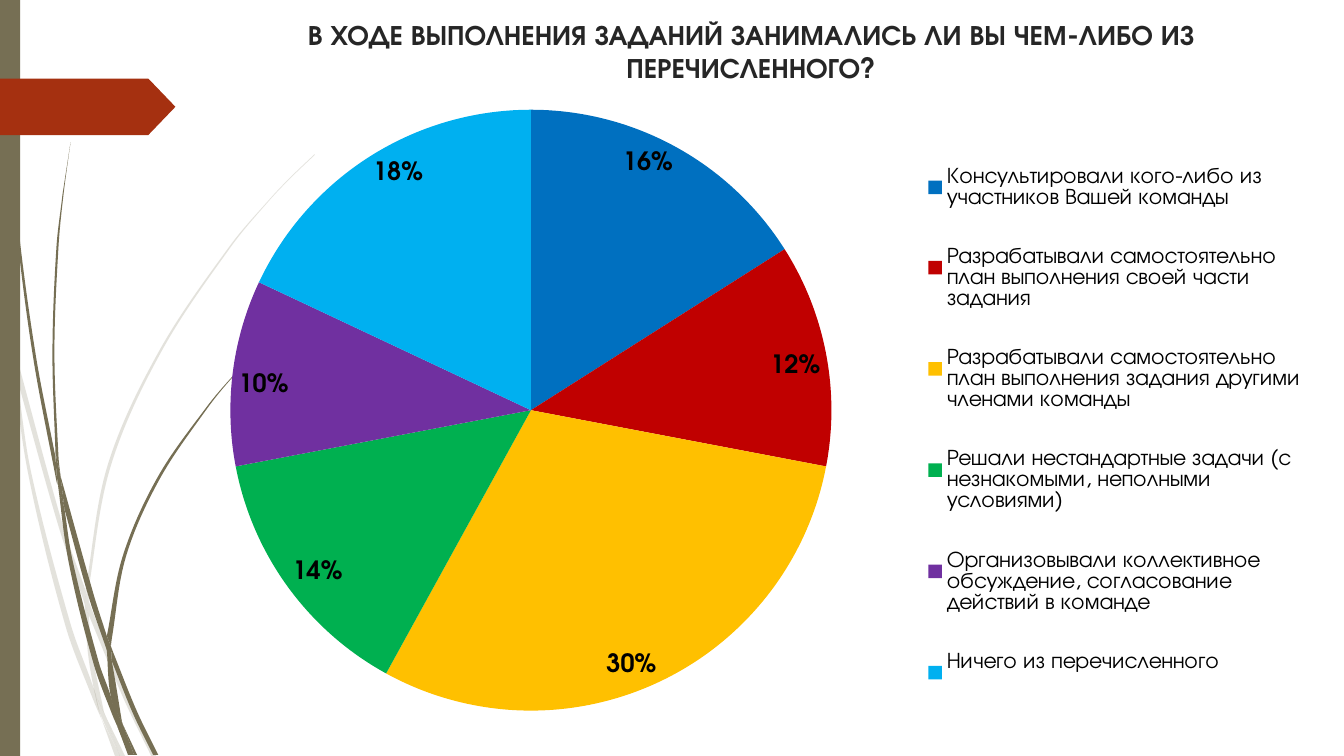
from dataclasses import dataclass

from lxml import etree
from pptx import Presentation
from pptx.chart.chart import Chart
from pptx.chart.data import CategoryChartData
from pptx.dml.color import RGBColor
from pptx.enum.chart import XL_CHART_TYPE, XL_LABEL_POSITION, XL_LEGEND_POSITION
from pptx.enum.shapes import MSO_SHAPE
from pptx.enum.text import MSO_ANCHOR, PP_ALIGN
from pptx.oxml.ns import qn
from pptx.shapes.autoshape import Shape
from pptx.slide import Slide
from pptx.util import Inches, Pt


@dataclass(frozen=True)
class Theme:
    font: str = "TeX Gyre Adventor"
    olive: str = "766F54"
    rust: str = "A53010"
    title: str = "262626"
    black: str = "000000"
    title_size: int = 20
    label_size: int = 18
    legend_size: int = 16


@dataclass(frozen=True)
class Answer:
    text: str
    percent: int
    color: str


@dataclass(frozen=True)
class Blade:
    """A sliver of grass: one edge out, the other edge back, as x + yj inches."""
    out: tuple[complex, ...]
    back: tuple[complex, ...]


THEME = Theme()
QUESTION = "В ХОДЕ ВЫПОЛНЕНИЯ ЗАДАНИЙ ЗАНИМАЛИСЬ ЛИ ВЫ ЧЕМ-ЛИБО ИЗ ПЕРЕЧИСЛЕННОГО?"
ANSWERS = (
    Answer("Консультировали кого-либо из участников Вашей команды", 16, "0070C0"),
    Answer("Разрабатывали самостоятельно план выполнения своей части задания", 12, "C00000"),
    Answer("Разрабатывали самостоятельно план выполнения задания другими членами команды",
           30, "FFC000"),
    Answer("Решали нестандартные задачи (с незнакомыми, неполными условиями)", 14, "00B050"),
    Answer("Организовывали коллективное обсуждение, согласование действий в команде",
           10, "7030A0"),
    Answer("Ничего из перечисленного", 18, "00B0F0"),
)
PALE_GRASS = (
    Blade((.11+3.5j, .09+3.22j, 2.82j), (2.99j, .1+3.44j)),
    Blade((.17+3.76j, .58+5.22j, .84+5.99j), (.85+5.86j, .62+5.2j, .14+3.45j)),
    Blade((.88+6.1j, 1.23+6.94j, 1.5+7.5j), (1.55+7.5j, 1.27+6.92j, .92+6.07j, .88+5.96j)),
    Blade((1.05+7.11j, 1.19+7.5j), (1.24+7.5j,)),
    Blade((.11+3.5j, .28+4.7j, .65+6.21j, .92+6.93j, 1.01+7.14j),
          (.99+7.07j, .93+6.83j, .7+6.19j, .31+4.69j, .17+3.76j)),
    Blade((.84+5.99j, .87+6.46j, .93+6.83j, .96+6.92j, 1.05+7.11j),
          (1.03+7.06j, .91+6.46j, .88+6.1j)),
    Blade((.88+5.96j, .88+5.84j, 1.1+4.62j, 1.6+3.49j, 2.29+2.45j, 2.68+1.98j,
           2.9+1.75j, 3.12+1.54j),
          (3.12+1.53j, 2.89+1.75j, 2.68+1.97j, 2.28+2.44j, 1.58+3.48j, 1.07+4.61j,
           .85+5.84j)),
    Blade((1.01+7.14j, 1.14+7.5j), (1.19+7.5j,)),
    Blade((.88+6.1j, .88+5.96j), (.85+5.86j, .84+5.99j)),
    Blade((.93+6.83j, .99+7.07j, 1.19+7.5j), (1.05+7.11j, .96+6.92j)),
)
DARK_GRASS = (
    Blade((.03, .03+.48j, .07+1.1j, .17+2.33j, .33+3.55j, .56+4.77j, .57+4.81j),
          (.55+4.53j, .36+3.55j, .19+2.32j, .08+1.09j, .05+.48j)),
    Blade((.64+5.05j, .88+5.92j, 1.06+6.45j), (1.06+6.31j, .93+5.9j, .6+4.72j)),
    Blade((1.11+6.56j, 1.32+7.08j, 1.52+7.49j), (1.57+7.49j, 1.36+7.06j, 1.13+6.49j, 1.1+6.41j)),
    Blade((.57+4.77j, .68+5.57j, .93+6.59j, 1.11+7.08j, 1.17+7.22j),
          (1.16+7.17j, 1.1+6.91j, .98+6.57j, .72+5.56j, .64+5.05j)),
    Blade((.6+4.72j, .58+4.53j, .54+3.49j, .58+2.45j, .63+1.93j, .7+1.41j),
          (.62+1.93j, .56+2.45j, .52+3.49j, .55+4.49j)),
    Blade((1.22+7.19j, 1.33+7.49j), (1.36+7.49j,)),
    Blade((.55+4.49j, .57+4.77j, .64+5.05j), (.6+4.72j,)),
    Blade((1.1+6.41j, 1.11+6.33j, 1.25+5.52j, 1.58+4.76j, 2.05+4.06j, 2.31+3.74j, 2.61+3.44j),
          (2.6+3.44j, 2.31+3.73j, 2.04+4.05j, 1.56+4.74j, 1.22+5.51j, 1.06+6.31j)),
    Blade((1.17+7.22j, 1.27+7.49j), (1.31+7.49j,)),
    Blade((1.06+6.45j, 1.1+6.91j, 1.22+7.19j), (1.21+7.16j, 1.11+6.56j, 1.09+6.51j)),
    Blade((1.06+6.31j, 1.06+6.45j, 1.11+6.56j), (1.1+6.41j,)),
    Blade((1.1+6.91j, 1.17+7.22j, 1.3+7.49j), (1.33+7.49j, 1.22+7.19j, 1.16+7.06j)),
)


def paint(shape: Shape, color: str, opacity: int = 100) -> None:
    shape.shadow.inherit = False
    shape.fill.solid()
    shape.fill.fore_color.rgb = RGBColor.from_string(color)
    shape.line.fill.background()
    if opacity < 100:
        tint = shape.element.spPr.find(f"{qn('a:solidFill')}/{qn('a:srgbClr')}")
        etree.SubElement(tint, qn("a:alpha"), val=str(opacity * 1000))


def smooth(edge: tuple[complex, ...]) -> list[complex]:
    """Bezier points, three to a segment, of a curve through the edge."""
    padded = (edge[0], *edge, edge[-1])
    curve = []
    for before, start, end, after in zip(padded, padded[1:], padded[2:], padded[3:]):
        reach = abs(end - start) / 3
        leaving, arriving = end - before, after - start
        curve += [start + leaving / abs(leaving) * reach,
                  end - arriving / abs(arriving) * reach, end]
    return curve


def add_blade(slide: Slide, blade: Blade, opacity: int) -> None:
    corner = blade.back[0]
    curve = smooth(blade.out) + [blade.out[-1], corner, corner] + smooth(blade.back)
    root = blade.out[0]
    outline = slide.shapes.build_freeform(Inches(root.real), Inches(root.imag))
    outline.add_line_segments([(Inches(p.real), Inches(p.imag)) for p in curve])
    shape = outline.convert_to_shape()
    segments = list(shape.element.iter(qn("a:lnTo")))
    # The closing line back to the root stays straight.
    for first in range(0, len(curve), 3):
        bezier = etree.Element(qn("a:cubicBezTo"))
        segments[first].addprevious(bezier)
        for segment in segments[first:first + 3]:
            bezier.append(segment[0])
            segment.getparent().remove(segment)
    paint(shape, THEME.olive, opacity)


def add_question(slide: Slide) -> None:
    frame = slide.shapes.add_textbox(
        Inches(1.86), Inches(0.12), Inches(11.18), Inches(0.85)).text_frame
    frame.word_wrap = True
    frame.vertical_anchor = MSO_ANCHOR.TOP
    question = frame.paragraphs[0]
    question.text = QUESTION
    question.alignment = PP_ALIGN.CENTER
    question.font.name = THEME.font
    question.font.size = Pt(THEME.title_size)
    question.font.bold = True
    question.font.color.rgb = RGBColor.from_string(THEME.title)


def place(chart: Chart, part: str, x: float, y: float, w: float, h: float) -> None:
    """Fix a chart part's frame, in fractions of the chart."""
    owner = next(chart._chartSpace.iter(qn(part)))
    for automatic in owner.findall(qn("c:layout")):
        owner.remove(automatic)
    layout = etree.Element(qn("c:layout"))
    manual = etree.SubElement(layout, qn("c:manualLayout"))
    settings = {"xMode": "edge", "yMode": "edge", "x": x, "y": y, "w": w, "h": h}
    if part == "c:plotArea":
        settings = {"layoutTarget": "inner"} | settings
    for name, value in settings.items():
        etree.SubElement(manual, qn(f"c:{name}"), val=str(value))
    owner.insert(1 if part == "c:legend" else 0, layout)


def add_answers(slide: Slide) -> None:
    data = CategoryChartData()
    data.categories = [answer.text for answer in ANSWERS]
    data.add_series("Series 1", [answer.percent for answer in ANSWERS])
    chart = slide.shapes.add_chart(XL_CHART_TYPE.PIE, Inches(1.35), Inches(0.96),
                                   Inches(11.69), Inches(6.22), data).chart
    chart.has_title = False
    chart.font.name = THEME.font
    chart.font.size = Pt(THEME.label_size)
    chart.font.color.rgb = RGBColor.from_string(THEME.black)
    chart.has_legend = True
    chart.legend.position = XL_LEGEND_POSITION.RIGHT
    chart.legend.include_in_layout = False
    chart.legend.font.size = Pt(THEME.legend_size)
    pie = chart.plots[0]
    pie.vary_by_categories = True
    for index, answer in enumerate(ANSWERS):
        fill = pie.series[0].points[index].format.fill
        fill.solid()
        fill.fore_color.rgb = RGBColor.from_string(answer.color)
    labels = pie.series[0].data_labels
    labels.show_value = False
    labels.show_percentage = True
    labels.number_format = "0%"
    labels.number_format_is_linked = False
    labels.position = XL_LABEL_POSITION.INSIDE_END
    labels.font.size = Pt(THEME.label_size)
    labels.font.bold = True
    place(chart, "c:plotArea", 0.08, 0.02, 0.51, 0.96)
    place(chart, "c:legend", 0.66, 0.05, 0.34, 0.93)


def main() -> None:
    deck = Presentation()
    deck.slide_width, deck.slide_height = Inches(13.33), Inches(7.5)
    slide = deck.slides.add_slide(deck.slide_layouts[6])
    for grass, opacity in ((PALE_GRASS, 20), (DARK_GRASS, 100)):
        for blade in grass:
            add_blade(slide, blade, opacity)
    paint(slide.shapes.add_shape(MSO_SHAPE.RECTANGLE, 0, 0, Inches(0.2), Inches(7.5)),
          THEME.olive)
    pointer = slide.shapes.add_shape(
        MSO_SHAPE.PENTAGON, 0, Inches(0.78), Inches(1.74), Inches(0.56))
    pointer.adjustments[0] = 0.48
    paint(pointer, THEME.rust)
    add_question(slide)
    add_answers(slide)
    deck.save("out.pptx")


if __name__ == "__main__":
    main()
